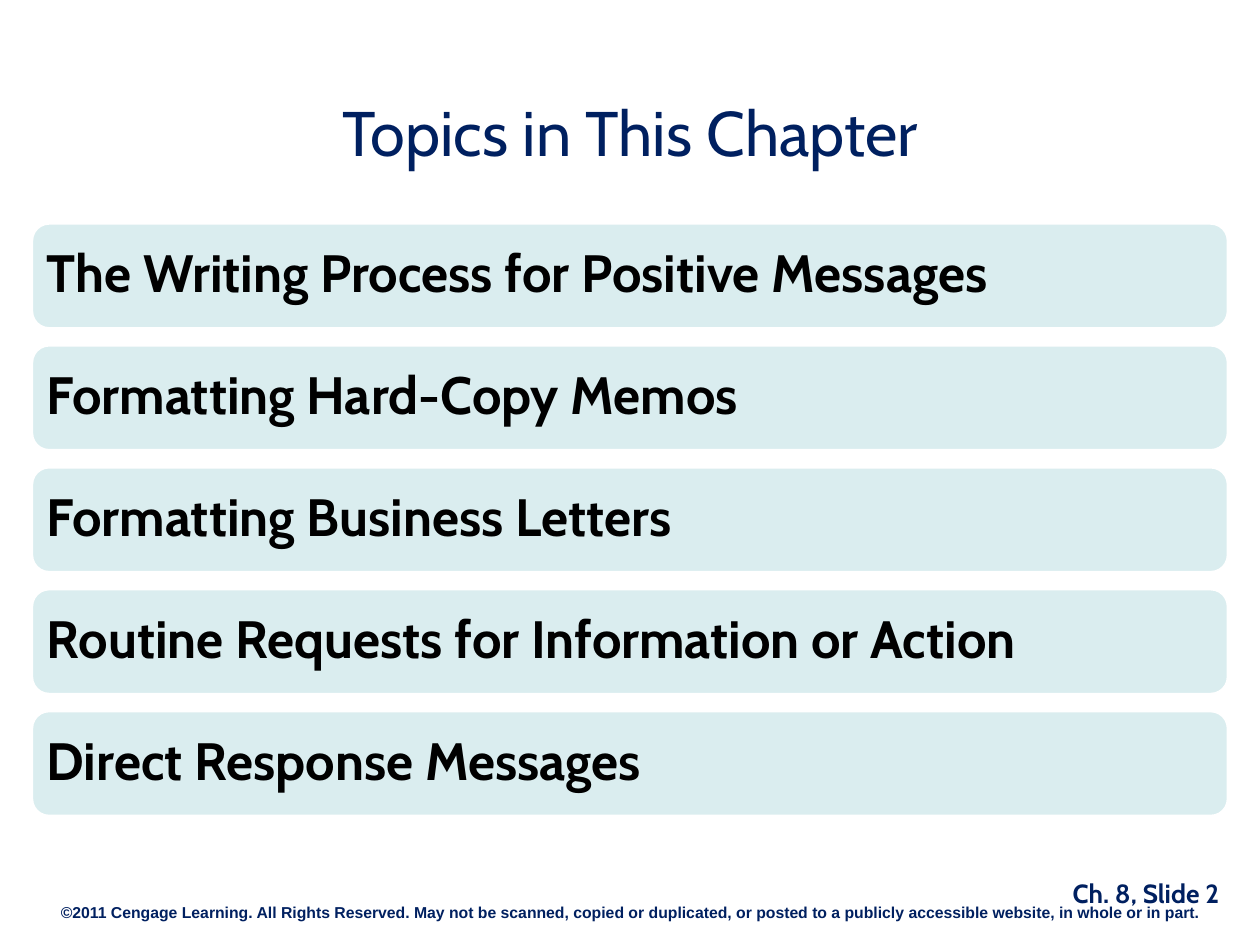
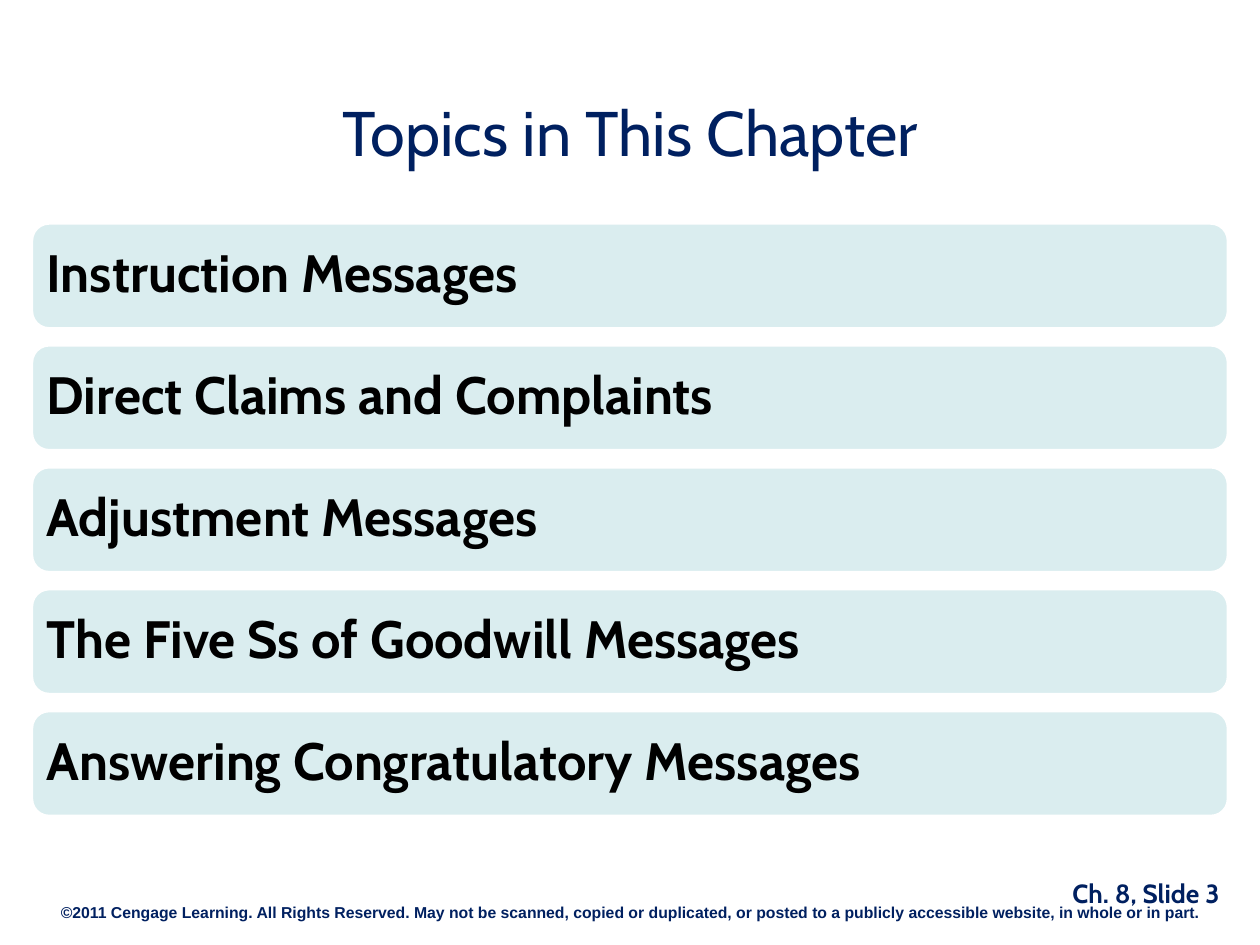
from collections import namedtuple
from dataclasses import dataclass

from pptx import Presentation
from pptx.dml.color import RGBColor as Rgb
from pptx.enum.shapes import MSO_SHAPE as Kind
from pptx.enum.text import MSO_ANCHOR as Anchor, PP_ALIGN as Align
from pptx.util import Inches, Pt

Box = namedtuple("Box", "col row cols rows")
Style = namedtuple("Style", "font size color bold align lead")

UNIT = 0.25  # inches per grid column and row
COLS, ROWS = 40, 30


@dataclass(frozen=True)
class Theme:
    navy = Rgb.from_string("002060")
    black = Rgb.from_string("000000")
    white = Rgb.from_string("FFFFFF")
    mint = Rgb.from_string("DAEDEF")
    title = Style("Cabin", 36, navy, False, Align.CENTER, 0.9)
    topic = Style("Cabin", 30, black, True, Align.LEFT, 0.9)
    number = Style("Cabin", 15, navy, True, Align.CENTER, 0.6)
    rights = Style("Arial", 9, navy, True, Align.CENTER, 0.6)


THEME = Theme()
HEAD = Box(1, 2.32, 38, 4)
BODY = Box(1, 7.08, 38, 18.84)
FOOT = Box(0, 28, COLS, 1.5)

TITLE = "Topics in This Chapter"
RIGHTS = ("©2011 Cengage Learning. All Rights Reserved. May not be scanned, "
          "copied or duplicated, or posted to a publicly accessible website, "
          "in whole or in part.")
TOPICS = [
    ["The Writing Process for Positive Messages",
     "Formatting Hard-Copy Memos",
     "Formatting Business Letters",
     "Routine Requests for Information or Action",
     "Direct Response Messages"],
    ["Instruction Messages",
     "Direct Claims and Complaints",
     "Adjustment Messages",
     "The Five Ss of Goodwill Messages",
     "Answering Congratulatory Messages"],
]


def place(box):
    """Turn grid cells into slide lengths."""
    return [Inches(n * UNIT) for n in box]


def write(shape, text, style, anchor=Anchor.TOP):
    frame = shape.text_frame
    frame.word_wrap = True
    frame.vertical_anchor = anchor
    para = frame.paragraphs[0]
    para.text = text
    para.alignment = style.align
    para.line_spacing = style.lead
    font = para.font
    font.name, font.size, font.bold = style.font, Pt(style.size), style.bold
    font.color.rgb = style.color


def label(slide, box, text, style, anchor=Anchor.TOP):
    write(slide.shapes.add_textbox(*place(box)), text, style, anchor)


def bar(slide, box, text):
    """One rounded topic bar."""
    shape = slide.shapes.add_shape(Kind.ROUNDED_RECTANGLE, *place(box))
    shape.shadow.inherit = False
    shape.fill.solid()
    shape.fill.fore_color.rgb = THEME.mint
    shape.line.color.rgb = THEME.white
    shape.line.width = Pt(2)
    # The rounded corners already inset the text a little
    shape.text_frame.margin_left = shape.text_frame.margin_right = Inches(0.08)
    write(shape, text, THEME.topic, Anchor.MIDDLE)


def stack(slide, box, topics, gap=0.51):
    """Equal bars with equal gaps, filling the box."""
    high = (box.rows - gap * (len(topics) - 1)) / len(topics)
    for i, topic in enumerate(topics):
        row = box.row + i * (high + gap)
        bar(slide, Box(box.col, row, box.cols, high), topic)


def footer(slide, box, num):
    # Copyright line across the slide, slide number above its right end
    label(slide, Box(box.col, box.row + 0.68, box.cols, 0.8),
          RIGHTS, THEME.rights)
    wide = 7.32
    label(slide, Box(box.col + box.cols - wide + 0.08, box.row, wide - 0.08, 1.32),
          f"Ch. 8, Slide {num}", THEME.number)


def agenda(deck, num, topics):
    slide = deck.slides.add_slide(deck.slide_layouts[6])
    footer(slide, FOOT, num)
    label(slide, HEAD, TITLE, THEME.title, Anchor.MIDDLE)
    stack(slide, BODY, topics)


def main():
    deck = Presentation()
    deck.slide_width = Inches(COLS * UNIT)
    deck.slide_height = Inches(ROWS * UNIT)
    for num, topics in enumerate(TOPICS, start=2):
        agenda(deck, num, topics)
    deck.save("out.pptx")


if __name__ == "__main__":
    main()
